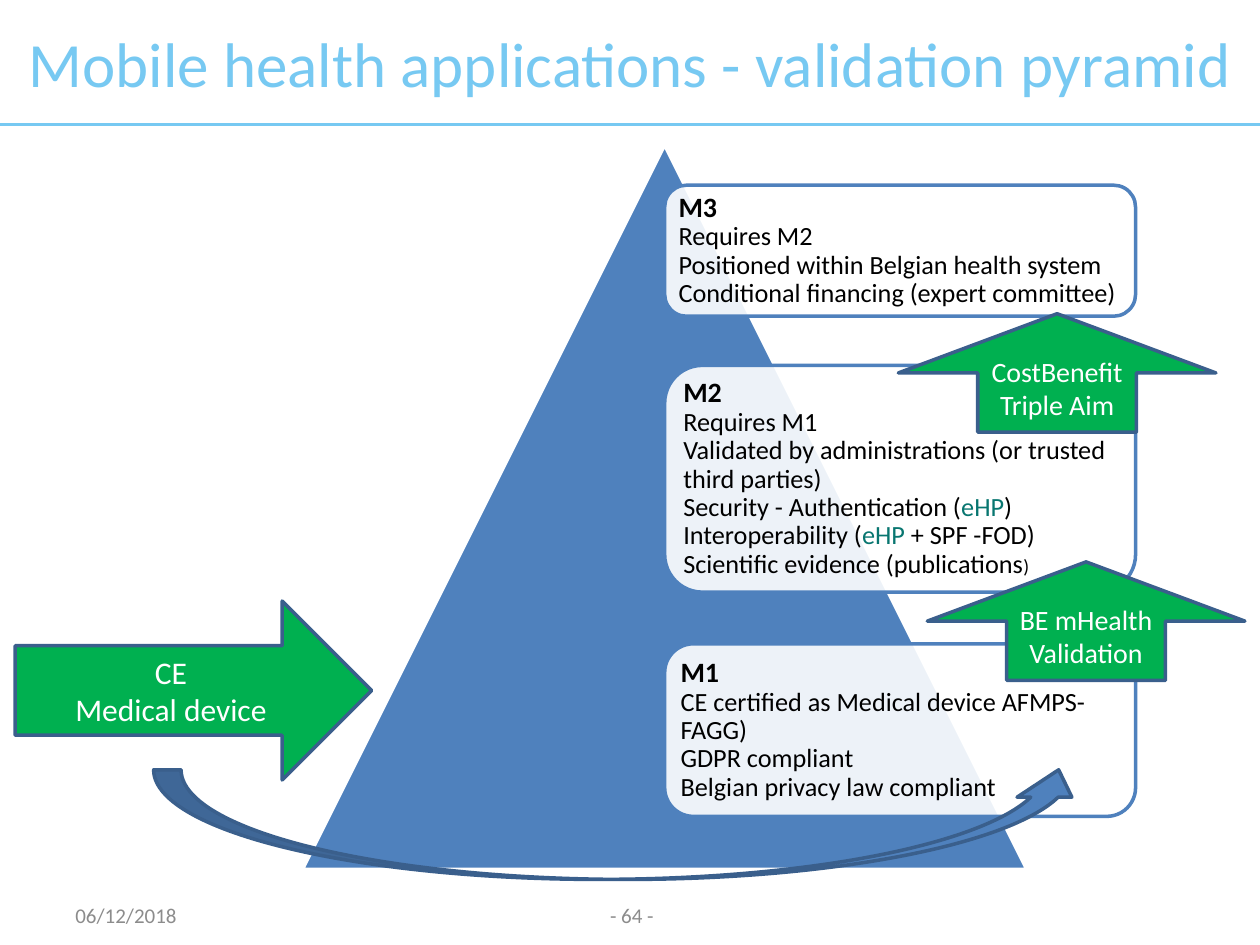
from lxml import etree
from pptx import Presentation
from pptx import util as u
from pptx.dml.color import RGBColor
from pptx.enum import shapes, text
from pptx.oxml.ns import qn

HUES = {"sky": "77C9F2", "blue": "4F81BD", "edge": "3A5F8C", "green": "00B050",
        "teal": "087670", "white": "FFFFFF", "black": "000000", "gray": "8C8C8C"}
KIND = shapes.MSO_SHAPE
MID = text.PP_ALIGN.CENTER

# Each level: top, height, heading, then lines made of (text, colour, size) parts
LEVELS = [
    (1.47, 1.04, "M3", [
        [("Requires M2", "black", 15)],
        [("Positioned within Belgian health system", "black", 15)],
        [("Conditional financing (expert committee)", "black", 15)]]),
    (2.9, 1.8, "M2", [
        [("Requires M1", "black", 15)],
        [("Validated by administrations (or trusted third parties)", "black", 15)],
        [("Security - Authentication (", "black", 15), ("eHP", "teal", 15),
         (")", "black", 15)],
        [("Interoperability (", "black", 15), ("eHP", "teal", 15),
         (" + SPF -FOD)", "black", 15)],
        [("Scientific evidence (publications", "black", 15), (")", "black", 11)]]),
    (5.11, 1.37, "M1", [
        [("CE certified as Medical device AFMPS-FAGG)", "black", 15)],
        [("GDPR compliant", "black", 15)],
        [("Belgian privacy law compliant", "black", 15)]]),
]


def rgb(hue):
    return RGBColor.from_string(HUES[hue])


def style(font, hue, size, bold=False):
    font.name, font.size, font.bold = "Calibri", u.Pt(size), bold
    font.color.rgb = rgb(hue)


def place(box):
    return [u.Inches(n) for n in box]


def label(slide, box, words, hue, size, align=MID):
    frame = slide.shapes.add_textbox(*place(box)).text_frame
    frame.word_wrap = True
    frame.vertical_anchor = text.MSO_ANCHOR.MIDDLE
    frame.text = words
    frame.paragraphs[0].alignment = align
    style(frame.paragraphs[0].runs[0].font, hue, size)


def solid(slide, kind, box, fill, edge):
    shape = slide.shapes.add_shape(kind, *place(box))
    shape.shadow.inherit = False
    shape.fill.solid()
    shape.fill.fore_color.rgb = rgb(fill)
    shape.line.color.rgb = rgb(edge)
    shape.line.width = u.Pt(2)
    shape.text_frame.word_wrap = True
    shape.text_frame.vertical_anchor = text.MSO_ANCHOR.MIDDLE
    return shape


def header(slide, box):
    left, top, width, height = box
    rule = slide.shapes.add_connector(
        shapes.MSO_CONNECTOR.STRAIGHT,
        *place((left, top + height, left + width, top + height)))
    rule.line.color.rgb = rgb("sky")
    rule.line.width = u.Pt(1.5)
    etree.SubElement(rule._element.spPr, qn("a:effectLst"))
    label(slide, box, "Mobile health applications - validation pyramid", "sky", 36)


def level(slide, box, head, lines):
    card = solid(slide, KIND.ROUNDED_RECTANGLE, box, "white", "blue")
    tint = card._element.spPr.find(".//" + qn("a:srgbClr"))
    etree.SubElement(tint, qn("a:alpha")).set("val", "90000")
    frame = card.text_frame
    frame.margin_left = frame.margin_right = u.Inches(0.06)
    frame.margin_top = frame.margin_bottom = u.Inches(0.06)
    para = frame.paragraphs[0]
    para.alignment = text.PP_ALIGN.LEFT
    para.line_spacing = 0.9
    run = para.add_run()
    run.text = head
    style(run.font, "black", 16, True)
    for line in lines:
        para.add_line_break()
        for words, hue, size in line:
            run = para.add_run()
            run.text = words
            style(run.font, hue, size)


def pyramid(slide, box):
    left, top, width, height = box
    solid(slide, KIND.ISOSCELES_TRIANGLE, box, "blue", "white")
    for y, tall, head, lines in LEVELS:
        level(slide, (left + width / 2, y, width * 0.65, tall), head, lines)


def arrow(slide, kind, box, words, size):
    shape = solid(slide, kind, box, "green", "edge")
    shape.text_frame.text = words
    for para in shape.text_frame.paragraphs:
        para.alignment = MID
        for run in para.runs:
            style(run.font, "white", size)


def steps(slide):
    """Arrows that lead from one level to the next."""
    arrow(slide, KIND.UP_ARROW, (7.36, 4.46, 2.52, 0.94), "BE mHealth Validation", 16)
    arrow(slide, KIND.UP_ARROW, (7.13, 2.49, 2.52, 0.94), "CostBenefit\vTriple Aim", 16)
    arrow(slide, KIND.RIGHT_ARROW, (0.12, 4.77, 2.83, 1.42), "CE\nMedical device", 18)
    solid(slide, KIND.CURVED_UP_ARROW, (1.22, 6.11, 7.4, 0.87), "blue", "edge")


def footer(slide, top):
    label(slide, (0.5, top, 2.33, 0.4), "06/12/2018", "gray", 12, text.PP_ALIGN.LEFT)
    label(slide, (3.85, top, 2.33, 0.4), "- 64 -", "gray", 12)


def main():
    deck = Presentation()
    deck.slide_width, deck.slide_height = u.Inches(10), u.Inches(7.5)
    slide = deck.slides.add_slide(deck.slide_layouts[6])
    header(slide, (0, 0, 10, 0.99))
    pyramid(slide, (2.4, 1.15, 5.75, 5.75))
    steps(slide)
    footer(slide, 7.06)
    deck.save("out.pptx")


if __name__ == "__main__":
    main()
